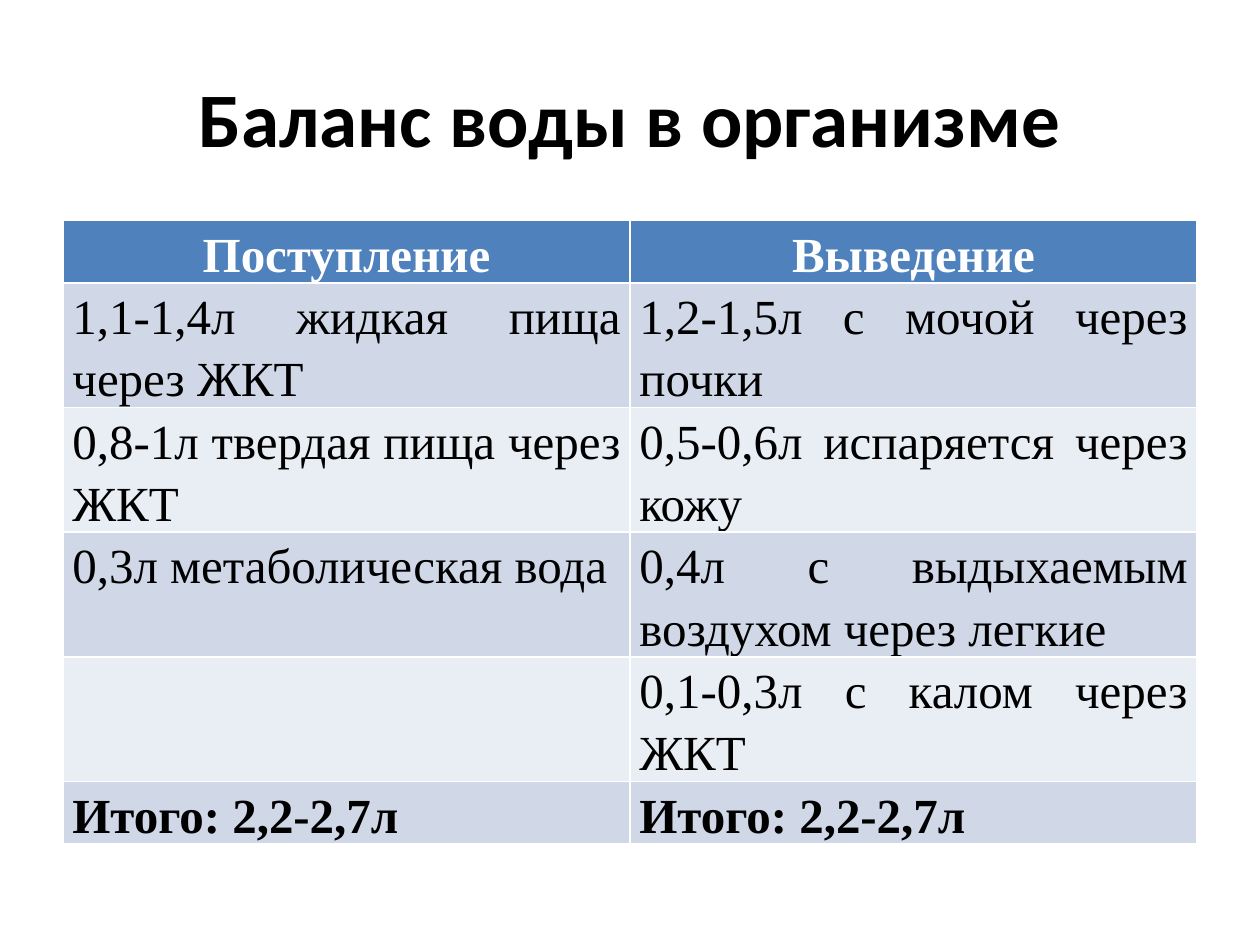
from lxml import etree
from pptx import Presentation
from pptx.dml.color import RGBColor
from pptx.enum.text import MSO_ANCHOR, PP_ALIGN
from pptx.oxml.ns import qn
from pptx.util import Pt

CENTER, JUSTIFY = PP_ALIGN.CENTER, PP_ALIGN.JUSTIFY
MIDDLE = MSO_ANCHOR.MIDDLE
COLORS = {"text": "000000", "white": "FFFFFF", "header": "4F81BD",
          "odd": "D0D8E8", "even": "E9EDF4"}
BALANCE = [
    ("Поступление", "Выведение"),
    ("1,1-1,4л жидкая пища через ЖКТ", "1,2-1,5л с мочой через почки"),
    ("0,8-1л твердая пища через ЖКТ", "0,5-0,6л испаряется через кожу"),
    ("0,3л метаболическая вода", "0,4л с выдыхаемым воздухом через легкие"),
    ("", "0,1-0,3л с калом через ЖКТ"),
    ("Итого: 2,2-2,7л", "Итого: 2,2-2,7л"),
]


def write(frame, text, *, font, size, color="text", bold=False,
          align=CENTER, spacing=1.0):
    paragraph = frame.paragraphs[0]
    paragraph.alignment = align
    paragraph.line_spacing = spacing
    run = paragraph.add_run()
    run.text = text
    run.font.name = font
    run.font.size = Pt(size)
    run.font.bold = bold
    run.font.color.rgb = RGBColor.from_string(COLORS[color])


def fill_cell(cell, color):
    # Borders must precede the fill in the cell properties
    properties = cell._tc.get_or_add_tcPr()
    for side in ("a:lnL", "a:lnR", "a:lnT", "a:lnB"):
        line = etree.SubElement(properties, qn(side), w=str(Pt(1)))
        solid = etree.SubElement(line, qn("a:solidFill"))
        etree.SubElement(solid, qn("a:srgbClr"), val=COLORS["white"])
    cell.fill.solid()
    cell.fill.fore_color.rgb = RGBColor.from_string(COLORS[color])


prs = Presentation()
prs.slide_width, prs.slide_height = Pt(720), Pt(540)
slide = prs.slides.add_slide(prs.slide_layouts[6])

# Title
title = slide.shapes.add_textbox(Pt(36), Pt(21.6), Pt(648), Pt(90)).text_frame
title.word_wrap = True
title.vertical_anchor = MIDDLE
write(title, "Баланс воды в организме", font="Calibri", size=44, bold=True)

# Water intake and output; rows grow to fit their text
row_height = Pt(29.5)
line_height = Pt(35.6)
balance = slide.shapes.add_table(len(BALANCE), 2, Pt(36), Pt(126), Pt(648),
                                 row_height * len(BALANCE)).table
for r, entries in enumerate(BALANCE):
    header, total = r == 0, r == len(BALANCE) - 1
    band = "header" if header else ("odd" if r % 2 else "even")
    for c, entry in enumerate(entries):
        cell = balance.cell(r, c)
        cell.margin_left = cell.margin_right = Pt(5.4)
        cell.margin_top = cell.margin_bottom = 0
        fill_cell(cell, band)
        if entry:
            write(cell.text_frame, entry, font="Times New Roman", size=28,
                  color="white" if header else "text", bold=header or total,
                  align=CENTER if header else JUSTIFY, spacing=line_height)

prs.save("out.pptx")
